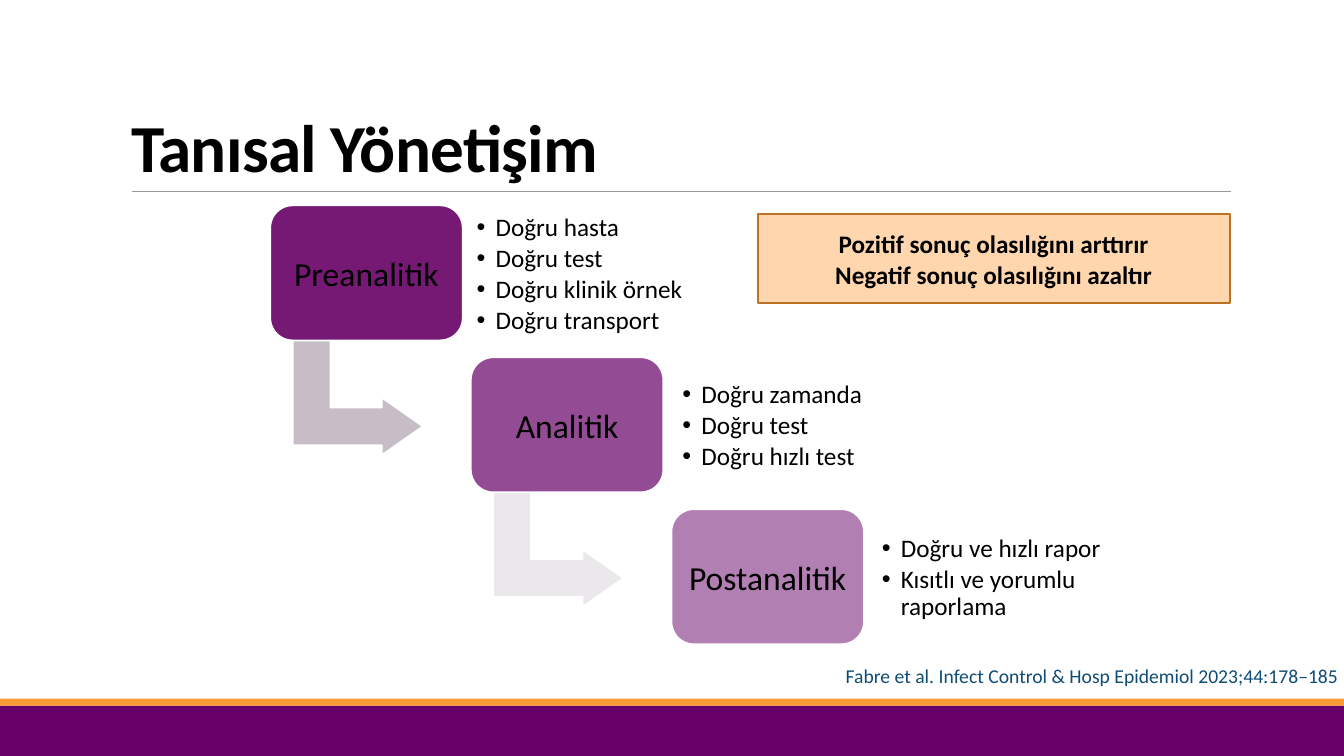
from dataclasses import dataclass
from typing import NamedTuple

from lxml.etree import SubElement
from pptx import Presentation
from pptx.dml.color import RGBColor as Rgb
from pptx.enum.shapes import MSO_CONNECTOR as Link, MSO_SHAPE as Kind
from pptx.enum.text import MSO_ANCHOR as Anchor, MSO_AUTO_SIZE as Fit, PP_ALIGN as Align
from pptx.oxml.ns import qn
from pptx.util import Pt


@dataclass(frozen=True)
class Theme:
    font: str = "Calibri"
    ink: str = "000000"
    white: str = "FFFFFF"
    plum: str = "660066"
    orange: str = "FF9933"
    peach: str = "FFD6AD"
    rust: str = "BD7126"
    rule: str = "999999"
    blue: str = "0F4C76"
    head: float = 48
    label: float = 24
    text: float = 18
    cite: float = 14


class Box(NamedTuple):
    left: float
    top: float
    width: float
    height: float


class Step(NamedTuple):
    name: str
    alpha: int
    arrow: str
    left: float
    width: float
    items: list[str]


THEME = Theme()
WIDE, HIGH = 960, 540
FIRST = Box(193, 146.7, 137.5, 96.5)
DX, DY = 143.3, 108.5
STEPS = [
    Step("Preanalitik", 90, "C6BDC6", 335.5, 222,
         ["Doğru hasta", "Doğru test", "Doğru klinik örnek", "Doğru transport"]),
    Step("Analitik", 70, "EBE8EB", 482.5, 186.5,
         ["Doğru zamanda", "Doğru test", "Doğru hızlı test"]),
    Step("Postanalitik", 50, "", 625, 204,
         ["Doğru ve hızlı rapor", "Kısıtlı ve yorumlu raporlama"]),
]


def place(shape, box: Box) -> None:
    shape.left, shape.top, shape.width, shape.height = map(Pt, box)


def write(shape, text: str, size: float, color: str = THEME.ink,
          bold: bool = False, align: Align = Align.LEFT) -> None:
    """Set the text, then format every paragraph and run."""
    shape.text_frame.text = text
    for para in shape.text_frame.paragraphs:
        para.alignment = align
        for run in para.runs:
            font = run.font
            font.name, font.size, font.bold = THEME.font, Pt(size), bold
            font.color.rgb = Rgb.from_string(color)


def inset(frame, side: float) -> None:
    frame.margin_left = frame.margin_right = Pt(side)
    frame.margin_top = frame.margin_bottom = Pt(side)


def draw(slide, kind: Kind, box: Box, fill: str, line: str = ""):
    shape = slide.shapes.add_shape(kind, *map(Pt, box))
    shape.shadow.inherit = False
    shape.fill.solid()
    shape.fill.fore_color.rgb = Rgb.from_string(fill)
    if line:
        shape.line.color.rgb = Rgb.from_string(line)
        shape.line.width = Pt(1.25)
    else:
        shape.line.fill.background()
    return shape


def fade(shape, alpha: int) -> None:
    """Make the fill opaque to the given percentage."""
    color = shape.element.xpath("./p:spPr/a:solidFill/a:srgbClr")[0]
    SubElement(color, qn("a:alpha"), val=str(alpha * 1000))


def bullets(body, step: Step, top: float) -> None:
    place(body, Box(step.left, top, step.width, 78))
    write(body, "\n".join(step.items), THEME.text)
    frame = body.text_frame
    frame.auto_size, frame.word_wrap = Fit.NONE, True
    frame.vertical_anchor = Anchor.MIDDLE
    inset(frame, 5)
    for para in frame.paragraphs:
        para.line_spacing = 0.9
        para.space_before, para.space_after = Pt(0), Pt(2.7)
        props = para._p.get_or_add_pPr()
        props.set("marL", str(Pt(13.5)))
        props.set("indent", str(-Pt(13.5)))
        SubElement(props, qn("a:buFont"), typeface="Arial")
        SubElement(props, qn("a:buChar"), char="•")


def stage(slide, step: Step, rank: int, body) -> None:
    """Draw one step of the stair with its list and the arrow leaving it."""
    left, top = FIRST.left + rank * DX, FIRST.top + rank * DY
    if step.arrow:
        spot = Box(left + 21.6, top + 90.8, 82, 93)
        arrow = draw(slide, Kind.BENT_UP_ARROW, spot, step.arrow, THEME.white)
        arrow.rotation = 90
        for i, value in enumerate((0.328, 0.25, 0.358)):
            arrow.adjustments[i] = value
    card = draw(slide, Kind.ROUNDED_RECTANGLE,
                Box(left, top, FIRST.width, FIRST.height), THEME.plum, THEME.white)
    fade(card, step.alpha)
    write(card, step.name, THEME.label, align=Align.CENTER)
    card.text_frame.vertical_anchor = Anchor.MIDDLE
    inset(card.text_frame, 2)
    bullets(body, step, top + 10.5)


def header(slide) -> None:
    title = slide.shapes.title
    place(title, Box(86.4, 22.3, 792, 114.5))
    write(title, "Tanısal Yönetişim", THEME.head, bold=True)
    frame = title.text_frame
    frame.auto_size, frame.vertical_anchor = Fit.NONE, Anchor.BOTTOM
    para = frame.paragraphs[0]
    para.line_spacing = 0.85
    para.runs[0].font._element.set("spc", "-50")
    rule = slide.shapes.add_connector(
        Link.STRAIGHT, Pt(94.3), Pt(136.7), Pt(879), Pt(136.7))
    rule.line.color.rgb = Rgb.from_string(THEME.rule)
    rule.line.width = Pt(0.5)
    SubElement(rule.element.spPr, qn("a:effectLst"))


def callout(slide) -> None:
    note = draw(slide, Kind.RECTANGLE, Box(541.2, 153, 337.3, 63.7),
                THEME.peach, THEME.rust)
    write(note, "Pozitif sonuç olasılığını arttırır\nNegatif sonuç olasılığını azaltır",
          THEME.text, bold=True, align=Align.CENTER)
    note.text_frame.vertical_anchor = Anchor.MIDDLE


def source(slide) -> None:
    cite = slide.shapes.add_textbox(*map(Pt, Box(597, 471, 363, 24.2)))
    write(cite, "Fabre et al. Infect Control & Hosp Epidemiol 2023;44:178–185",
          THEME.cite, THEME.blue)
    cite.text_frame.margin_right = Pt(0)
    cite.text_frame.word_wrap = False


def main() -> None:
    deck = Presentation()
    deck.slide_width, deck.slide_height = Pt(WIDE), Pt(HIGH)
    slide = deck.slides.add_slide(deck.slide_layouts.get_by_name("Comparison"))
    _, *bodies, spare = slide.placeholders
    spare.element.getparent().remove(spare.element)
    draw(slide, Kind.RECTANGLE, Box(0, 504, WIDE, 36), THEME.plum)
    draw(slide, Kind.RECTANGLE, Box(0, 499, WIDE, 5), THEME.orange)
    header(slide)
    for rank, (step, body) in enumerate(zip(STEPS, bodies)):
        stage(slide, step, rank, body)
    callout(slide)
    source(slide)
    deck.save("out.pptx")


if __name__ == "__main__":
    main()
